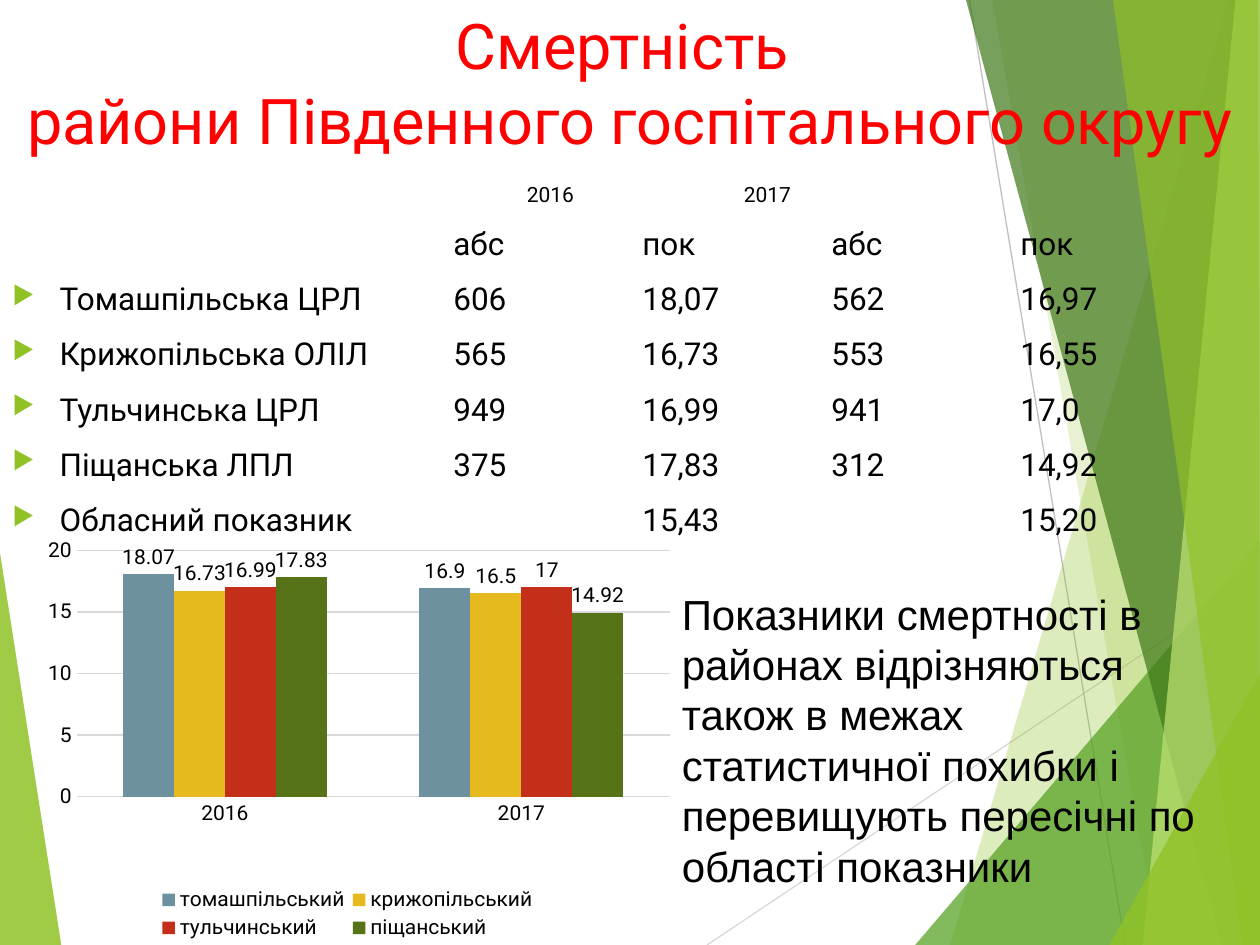
from lxml import etree
from pptx import Presentation
from pptx.chart.data import CategoryChartData
from pptx.dml.color import RGBColor
from pptx.enum.chart import XL_CHART_TYPE as ChartType
from pptx.enum.chart import XL_LABEL_POSITION as LabelPosition
from pptx.enum.chart import XL_LEGEND_POSITION as LegendPosition
from pptx.enum.chart import XL_TICK_MARK as TickMark
from pptx.enum.shapes import MSO_CONNECTOR as Connector
from pptx.enum.text import PP_ALIGN as Align
from pptx.oxml.ns import qn
from pptx.util import Pt

WIDTH, HEIGHT = 720, 540
FONT = "Roboto"
GREEN, BLACK, GRID = "90C226", "000000", "D9D9D9"

# Points, colour and opacity in percent, from back to front
LEFT_FACET = ([(0, 316), (35, 540), (0, 540)], GREEN, 85)
RIGHT_FACETS = [
    ([(702, 0), (543, 540), (720, 540), (720, 0)], GREEN, 30),
    ([(567, 0), (662, 540), (720, 540), (720, 0)], GREEN, 20),
    ([(523, 540), (720, 309), (720, 540)], "54A021", 72),
    ([(552, 0), (698, 540), (720, 540), (720, 0)], "3F7819", 70),
    ([(706, 0), (653, 540), (720, 540), (720, 0)], "C0E474", 70),
    ([(636, 0), (710, 540), (720, 540), (719, 0)], GREEN, 65),
    ([(634, 540), (720, 385), (720, 540)], GREEN, 80),
]

YEAR_STOPS = [294, 418]
COLUMN_STOPS = [252 + 108 * column for column in range(4)]
HEADINGS = ["", "абс", "пок", "абс", "пок"]
HOSPITALS = [
    ["Томашпільська ЦРЛ", "606", "18,07", "562", "16,97"],
    ["Крижопільська ОЛІЛ", "565", "16,73", "553", "16,55"],
    ["Тульчинська ЦРЛ", "949", "16,99", "941", "17,0"],
    ["Піщанська ЛПЛ", "375", "17,83", "312", "14,92"],
    ["Обласний показник", "", "15,43", "", "15,20"],
]

YEARS = ["2016", "2017"]
SERIES = [
    ("томашпільський", (18.07, 16.9), "6E91A0"),
    ("крижопільський", (16.73, 16.5), "E6B91E"),
    ("тульчинський", (16.99, 17), "C42F1A"),
    ("піщанський", (17.83, 14.92), "567417"),
]


def rgb(color):
    return RGBColor.from_string(color)


def style_font(font, size, color=BLACK, name=FONT):
    font.size = Pt(size)
    font.name = name
    font.color.rgb = rgb(color)


def add_facet(slide, points, color, opacity):
    builder = slide.shapes.build_freeform(*points[0], scale=Pt(1))
    builder.add_line_segments(points[1:], close=True)
    shape = builder.convert_to_shape()
    shape.shadow.inherit = False
    shape.line.fill.background()
    shape.fill.solid()
    shape.fill.fore_color.rgb = rgb(color)
    color_element = shape.element.find(".//" + qn("a:srgbClr"))
    etree.SubElement(color_element, qn("a:alpha"), val=str(opacity * 1000))


def add_line(slide, start, end, color):
    ends = [Pt(value) for value in (*start, *end)]
    line = slide.shapes.add_connector(Connector.STRAIGHT, *ends)
    line.line.color.rgb = rgb(color)
    line.line.width = Pt(0.75)
    etree.SubElement(line.element.find(qn("p:spPr")), qn("a:effectLst"))


def add_text_frame(slide, left, top, width, height):
    box = slide.shapes.add_textbox(Pt(left), Pt(top), Pt(width), Pt(height))
    box.text_frame.word_wrap = True
    return box.text_frame


def add_text(slide, text, area, size, color=BLACK, name=FONT, align=Align.LEFT):
    text_frame = add_text_frame(slide, *area)
    text_frame.text = text
    paragraph = text_frame.paragraphs[0]
    paragraph.alignment = align
    for run in paragraph.runs:
        style_font(run.font, size, color, name)


def format_row(paragraph, cells, stops, size, bullet=False):
    """Fill a paragraph with cells that are aligned at tab stops."""
    paragraph.text = "\t".join(cells)
    paragraph.space_before = Pt(10)
    for run in paragraph.runs:
        style_font(run.font, size)
    properties = paragraph.runs[0].font and paragraph._p.get_or_add_pPr()
    if bullet:
        properties.set("marL", str(Pt(27)))
        properties.set("indent", str(-Pt(27)))
        bullet_color = etree.SubElement(properties, qn("a:buClr"))
        etree.SubElement(bullet_color, qn("a:srgbClr"), val=GREEN)
        etree.SubElement(properties, qn("a:buSzPct"), val="80000")
        etree.SubElement(properties, qn("a:buChar"), char="▶")
    tabs = etree.SubElement(properties, qn("a:tabLst"))
    for stop in stops:
        etree.SubElement(tabs, qn("a:tab"), pos=str(Pt(stop)), algn="l")


def add_mortality_rows(slide):
    text_frame = add_text_frame(slide, 0, 100, WIDTH, 376)
    format_row(text_frame.paragraphs[0], ["", *YEARS], YEAR_STOPS, 12)
    format_row(text_frame.add_paragraph(), HEADINGS, COLUMN_STOPS, 18)
    for cells in HOSPITALS:
        format_row(text_frame.add_paragraph(), cells, COLUMN_STOPS, 18, bullet=True)


def set_layout(parent, index, x, y, w, h, inner=False):
    """Place a chart part by fractions of the chart area."""
    for old_layout in parent.findall(qn("c:layout")):
        parent.remove(old_layout)
    layout = etree.Element(qn("c:layout"))
    manual = etree.SubElement(layout, qn("c:manualLayout"))
    settings = [("layoutTarget", "inner")] if inner else []
    settings += [("xMode", "edge"), ("yMode", "edge")]
    settings += [("x", x), ("y", y), ("w", w), ("h", h)]
    for tag, value in settings:
        etree.SubElement(manual, qn("c:" + tag), val=str(value))
    parent.insert(index, layout)


def format_axes(chart):
    for axis in (chart.category_axis, chart.value_axis):
        axis.major_tick_mark = axis.minor_tick_mark = TickMark.NONE
        style_font(axis.tick_labels.font, 12)
    category_line = chart.category_axis.format.line
    grid_line = chart.value_axis.major_gridlines.format.line
    for line in (category_line, grid_line):
        line.color.rgb = rgb(GRID)
        line.width = Pt(0.75)
    chart.value_axis.format.line.fill.background()
    chart.value_axis.minimum_scale = 0
    chart.value_axis.maximum_scale = 20
    chart.value_axis.major_unit = 5


def add_mortality_chart(slide):
    data = CategoryChartData()
    data.categories = YEARS
    for name, values, _ in SERIES:
        data.add_series(name, values)
    area = [Pt(value) for value in (14.4, 307.5, 368.6, 231.8)]
    chart = slide.shapes.add_chart(ChartType.COLUMN_CLUSTERED, *area, data).chart
    chart.has_title = False
    style_font(chart.font, 10)
    format_axes(chart)

    plot = chart.plots[0]
    plot.vary_by_categories = False
    plot.gap_width = 182
    plot.overlap = 0
    for series, (_, _, color) in zip(plot.series, SERIES):
        series.format.fill.solid()
        series.format.fill.fore_color.rgb = rgb(color)
        labels = series.data_labels
        labels.show_value = True
        labels.position = LabelPosition.OUTSIDE_END
        style_font(labels.font, 12)

    chart.has_legend = True
    chart.legend.position = LegendPosition.BOTTOM
    chart.legend.include_in_layout = False
    style_font(chart.legend.font, 12)
    plot_area = chart.element.find(".//" + qn("c:plotArea"))
    set_layout(plot_area, 0, 0.08, 0.01, 0.92, 0.62, inner=True)
    set_layout(chart.element.find(".//" + qn("c:legend")), 1, 0.2, 0.85, 0.6, 0.15)


def main():
    presentation = Presentation()
    presentation.slide_width, presentation.slide_height = Pt(WIDTH), Pt(HEIGHT)
    slide = presentation.slides.add_slide(presentation.slide_layouts[6])
    add_facet(slide, *LEFT_FACET)
    add_line(slide, (404, 540), (720, 329), GRID)
    add_line(slide, (554, 0), (643, 540), "BFBFBF")
    for facet in RIGHT_FACETS:
        add_facet(slide, *facet)
    add_text(slide, "Смертність \vрайони Південного госпітального округу",
             (0, 0, WIDTH, 152), 36, "FF0000", align=Align.CENTER)
    add_mortality_rows(slide)
    add_mortality_chart(slide)
    add_text(slide, "Показники смертності в районах відрізняються також в межах "
             "статистичної похибки і перевищують пересічні по області показники",
             (382.5, 332.5, 312, 181.5), 24, name="Arial")
    presentation.save("out.pptx")


if __name__ == "__main__":
    main()
